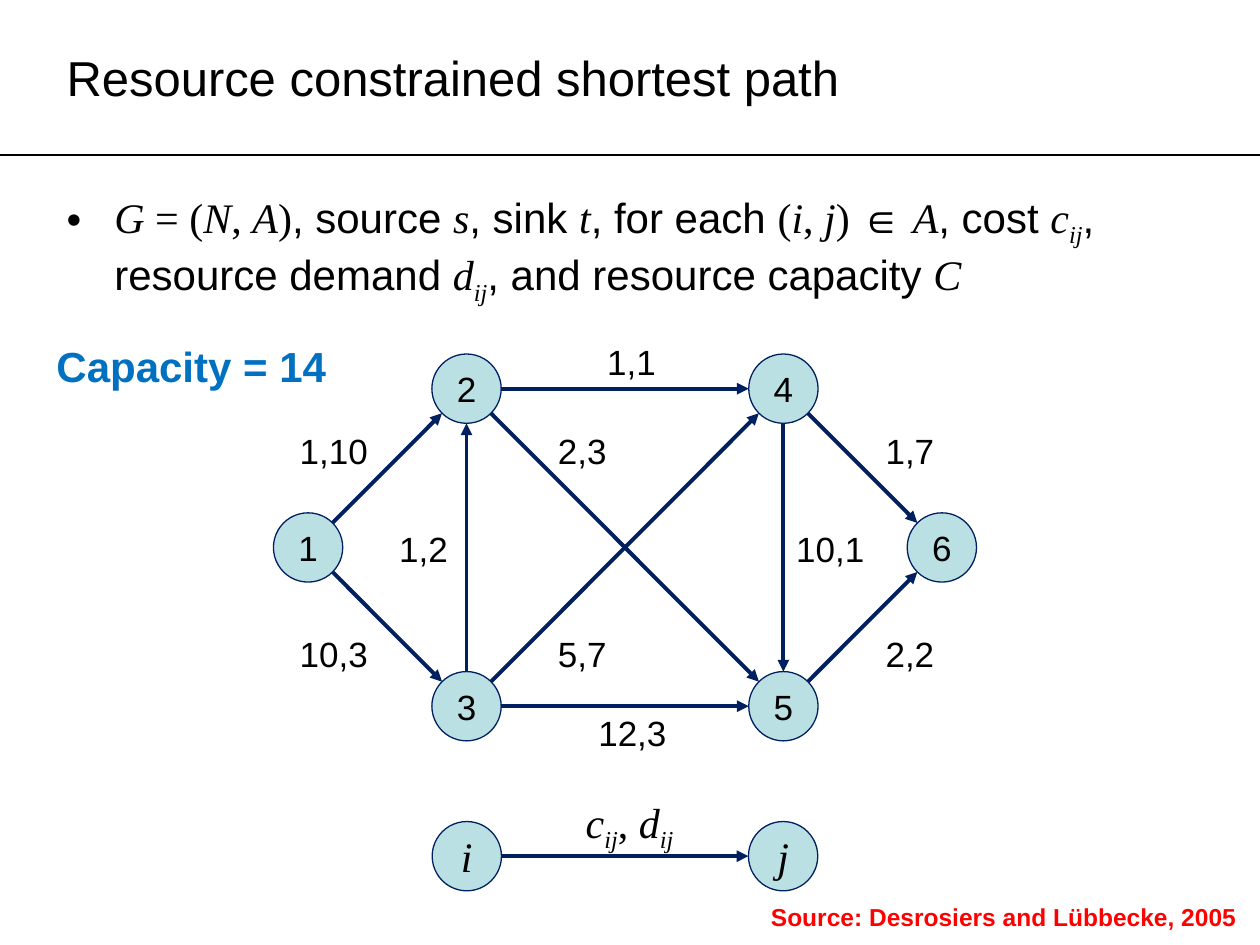
from dataclasses import dataclass
from math import hypot

from lxml import etree
from pptx import Presentation
from pptx.dml.color import RGBColor
from pptx.enum.shapes import MSO_CONNECTOR, MSO_SHAPE
from pptx.enum.text import MSO_ANCHOR, MSO_AUTO_SIZE, PP_ALIGN
from pptx.oxml.ns import qn
from pptx.util import Inches, Pt

LINE = MSO_CONNECTOR.STRAIGHT
OVAL = MSO_SHAPE.OVAL
MIDDLE, TOP = MSO_ANCHOR.MIDDLE, MSO_ANCHOR.TOP
CENTER, LEFT = PP_ALIGN.CENTER, PP_ALIGN.LEFT
FIT = MSO_AUTO_SIZE.SHAPE_TO_FIT_TEXT


@dataclass(frozen=True)
class Theme:
    black: str = "000000"
    navy: str = "002060"
    node: str = "BBE0E3"
    blue: str = "0070C0"
    red: str = "FF0000"
    sans: str = "Arial"
    serif: str = "Times New Roman"
    title: int = 28
    body: int = 24
    label: int = 20
    source: int = 14
    thin: float = 0.75
    thick: float = 2.25


T = Theme()
PLAIN, MATH, VAR, SUB = "plain", "math", "var", "sub"
DIAMETER = 0.55
COST_DEMAND = [("c", VAR), ("ij", SUB), (", ", MATH), ("d", VAR), ("ij", SUB)]


def write(tf, runs, size=T.label, color=T.black, bold=False, align=LEFT, anchor=TOP, wrap=True):
    tf.word_wrap = wrap
    tf.vertical_anchor = anchor
    p = tf.paragraphs[0]
    p.alignment = align
    for text, style in [(runs, PLAIN)] if isinstance(runs, str) else runs:
        r = p.add_run()
        r.text = text
        r.font.name = T.sans if style == PLAIN else T.serif
        r.font.size = Pt(size)
        r.font.bold = bold
        r.font.italic = style in (VAR, SUB)
        r.font.color.rgb = RGBColor.from_string(color)
        if style == SUB:
            r._r.get_or_add_rPr().set("baseline", "-25000")
    return p


def add_text(s, box, runs, **fmt):
    tf = s.shapes.add_textbox(*map(Inches, box)).text_frame
    p = write(tf, runs, **fmt)
    if not tf.word_wrap:
        tf.auto_size = FIT
    return p


def add_line(s, start, end, color, width, arrow=False):
    line = s.shapes.add_connector(LINE, *map(Inches, (*start, *end)))
    line.line.color.rgb = RGBColor.from_string(color)
    line.line.width = Pt(width)
    if arrow:
        etree.SubElement(line.line._get_or_add_ln(), qn("a:tailEnd"), type="triangle")
    etree.SubElement(line._element.spPr, qn("a:effectLst"))


def add_node(s, center, runs, size=T.label):
    x, y = center
    sp = s.shapes.add_shape(OVAL, Inches(x - DIAMETER / 2), Inches(y - DIAMETER / 2),
                            Inches(DIAMETER), Inches(DIAMETER))
    sp.shadow.inherit = False
    sp.fill.solid()
    sp.fill.fore_color.rgb = RGBColor.from_string(T.node)
    sp.line.color.rgb = RGBColor.from_string(T.navy)
    sp.line.width = Pt(T.thin)
    tf = sp.text_frame
    tf.margin_left = tf.margin_right = 0
    write(tf, runs, size=size, align=CENTER, anchor=MIDDLE, wrap=False)


def add_arc(s, start, end):
    (x1, y1), (x2, y2) = start, end
    scale = DIAMETER / 2 / hypot(x2 - x1, y2 - y1)
    dx, dy = (x2 - x1) * scale, (y2 - y1) * scale
    add_line(s, (x1 + dx, y1 + dy), (x2 - dx, y2 - dy), T.navy, T.thick, arrow=True)


def add_header(s, box):
    add_line(s, (0, 1.23), (10, 1.23), T.black, T.thin)
    add_text(s, box, "Resource constrained shortest path", size=T.title, anchor=MIDDLE)


def add_definition(s, box):
    p = add_text(s, box, [
        ("G", VAR), (" = (", MATH), ("N", VAR), (", ", MATH), ("A", VAR), (")", MATH),
        (", source ", PLAIN), ("s", VAR), (", sink ", PLAIN), ("t", VAR),
        (", for each ", PLAIN), ("(", MATH), ("i", VAR), (", ", MATH), ("j", VAR),
        (") ∈ ", MATH), ("A", VAR), (", cost ", PLAIN), ("c", VAR), ("ij", SUB),
        (", resource demand ", PLAIN), ("d", VAR), ("ij", SUB),
        (", and resource capacity ", PLAIN), ("C", VAR),
    ], size=T.body)
    pPr = p._p.get_or_add_pPr()
    pPr.set("marL", str(Inches(0.38)))
    pPr.set("indent", str(-Inches(0.38)))
    etree.SubElement(pPr, qn("a:buFont"), typeface=T.sans)
    etree.SubElement(pPr, qn("a:buChar"), char="•")


def add_network(s, box):
    left, top, width, height = box
    step = (width - DIAMETER) / 4
    rise = (height - DIAMETER) / 2
    grid = {"1": (0, 1), "2": (1, 0), "3": (1, 2), "4": (3, 0), "5": (3, 2), "6": (4, 1)}
    centers = {name: (left + DIAMETER / 2 + col * step, top + DIAMETER / 2 + row * rise)
               for name, (col, row) in grid.items()}
    for name, center in centers.items():
        add_node(s, center, name)
    arcs = [
        ("1", "2", "1,10", 0.11, 0.55), ("1", "3", "10,3", 0.11, 2.16),
        ("3", "2", "1,2", 0.9, 1.33), ("3", "5", "12,3", 2.48, 2.79),
        ("2", "4", "1,1", 2.55, -0.16), ("3", "4", "5,7", 2.16, 2.16),
        ("2", "5", "2,3", 2.16, 0.55), ("4", "5", "10,1", 4.05, 1.33),
        ("4", "6", "1,7", 4.76, 0.55), ("5", "6", "2,2", 4.76, 2.16),
    ]
    for start, end, label, x, y in arcs:
        add_arc(s, centers[start], centers[end])
        label_width = 0.75 if len(label) > 3 else 0.59
        add_text(s, (left + x, top + y, label_width, 0.44), label, wrap=False)


def add_legend(s, box):
    left, top, width, height = box
    y = top + height - DIAMETER / 2
    start, end = (left + DIAMETER / 2, y), (left + width - DIAMETER / 2, y)
    for center, name in ((start, "i"), (end, "j")):
        add_node(s, center, [(name, VAR)], size=T.body)
    add_arc(s, start, end)
    add_text(s, (left + 1.12, top, 0.94, 0.5), COST_DEMAND, size=T.body, wrap=False)


def main():
    prs = Presentation()
    prs.slide_width, prs.slide_height = Inches(10), Inches(7.5)
    s = prs.slides.add_slide(prs.slide_layouts[6])
    add_header(s, (0.43, 0.07, 9.14, 1.08))
    add_definition(s, (0.43, 1.47, 9.14, 1.1))
    add_network(s, (2.17, 2.81, 5.58, 3.07))
    add_legend(s, (3.43, 6.27, 3.06, 0.8))
    add_text(s, (0.35, 2.65, 2.36, 0.5), "Capacity = 14",
             size=T.body, color=T.blue, bold=True, wrap=False)
    add_text(s, (6.02, 7.11, 3.91, 0.34), "Source: Desrosiers and Lübbecke, 2005",
             size=T.source, color=T.red, bold=True, wrap=False)
    prs.save("out.pptx")


if __name__ == "__main__":
    main()
